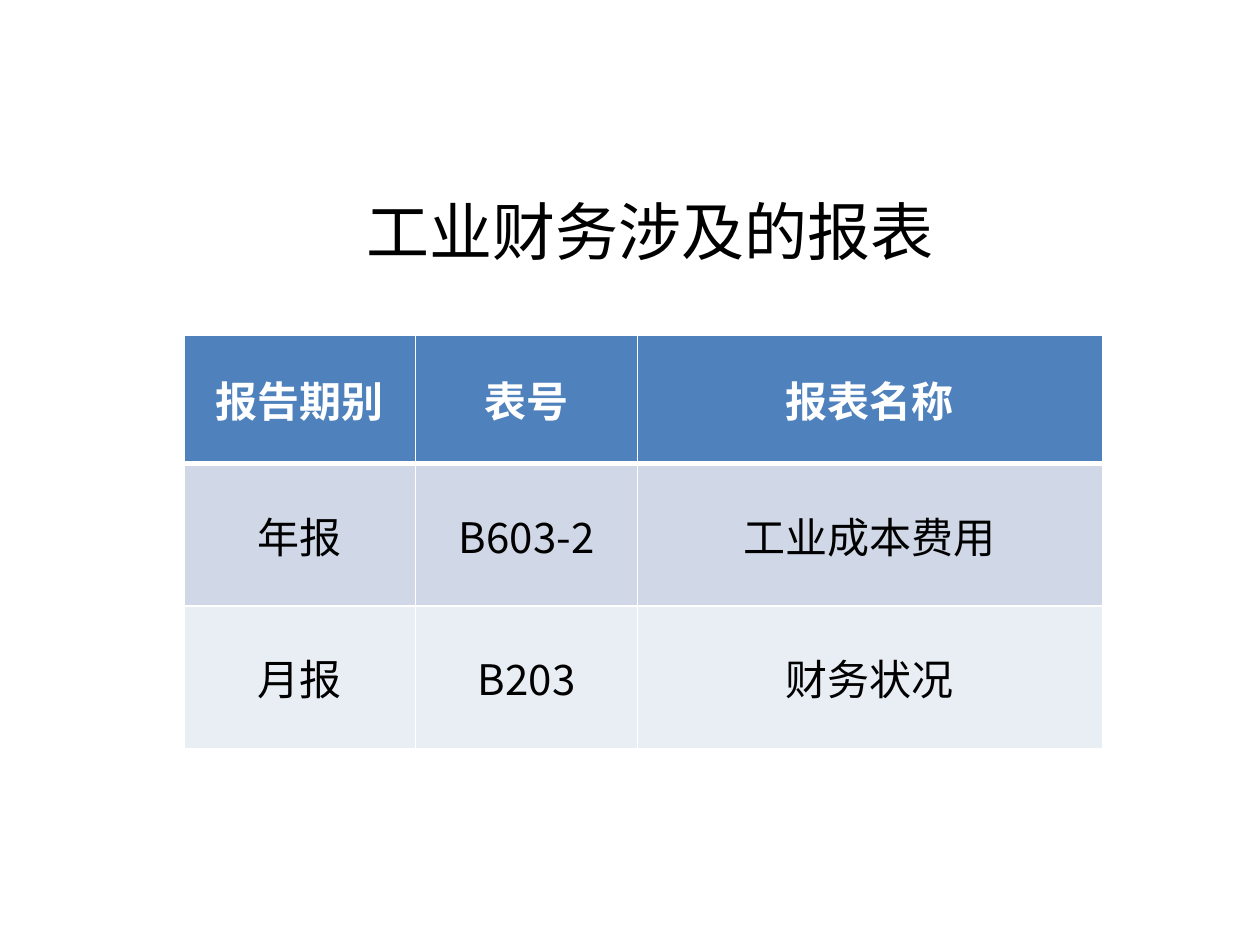
from pptx import Presentation
from pptx.dml.color import RGBColor
from pptx.enum.text import MSO_ANCHOR as Anchor, MSO_AUTO_SIZE as AutoSize, PP_ALIGN as Align
from pptx.oxml.ns import qn
from pptx.util import Inches, Pt
from lxml.etree import SubElement

FONT = "Noto Sans CJK SC"
WHITE = RGBColor(0xFF, 0xFF, 0xFF)
BLACK = RGBColor(0x00, 0x00, 0x00)
HEADER_BLUE = RGBColor(0x4F, 0x81, 0xBD)
BAND_BLUE = RGBColor(0xD0, 0xD8, 0xE8)
BAND_PALE = RGBColor(0xE9, 0xED, 0xF4)

TITLE = "工业财务涉及的报表"
REPORTS = [
    ["报告期别", "表号", "报表名称"],
    ["年报", "B603-2", "工业成本费用"],
    ["月报", "B203", "财务状况"],
]
ROW_FILLS = [HEADER_BLUE, BAND_BLUE, BAND_PALE]
COLUMN_WIDTHS = [1.84, 1.76, 3.69]
ROW_HEIGHTS = [1.02, 1.13, 1.13]


def write_text(frame, text, size=24, color=BLACK, bold=False):
    para = frame.paragraphs[0]
    para.alignment = Align.CENTER
    span = para.add_run()
    span.text = text
    span.font.name = FONT
    span.font.size = Pt(size)
    span.font.bold = bold
    span.font.color.rgb = color
    SubElement(span.font._element, qn("a:ea"), typeface=FONT)


def add_title(page):
    box = page.shapes.add_textbox(Inches(2.58), Inches(1.48), Inches(5.16), Inches(0.71))
    frame = box.text_frame
    frame.word_wrap = True
    frame.auto_size = AutoSize.SHAPE_TO_FIT_TEXT
    write_text(frame, TITLE, size=36)


def set_borders(cell, top=1, bottom=1):
    properties = cell._tc.get_or_add_tcPr()
    for side, width in (("L", 1), ("R", 1), ("T", top), ("B", bottom)):
        line = SubElement(properties, qn(f"a:ln{side}"), w=str(Pt(width)))
        fill = SubElement(line, qn("a:solidFill"))
        SubElement(fill, qn("a:srgbClr"), val=str(WHITE))


def fill_cell(cell, text, row):
    header = row == 0
    set_borders(cell, top=3 if row == 1 else 1, bottom=3 if header else 1)
    cell.fill.solid()
    cell.fill.fore_color.rgb = ROW_FILLS[row]
    cell.vertical_anchor = Anchor.MIDDLE
    write_text(cell.text_frame, text, color=WHITE if header else BLACK, bold=header)


def add_report_table(page):
    table = page.shapes.add_table(
        len(REPORTS), len(COLUMN_WIDTHS), Inches(1.46), Inches(2.66),
        Inches(sum(COLUMN_WIDTHS)), Inches(sum(ROW_HEIGHTS)),
    ).table
    for column, width in zip(table.columns, COLUMN_WIDTHS):
        column.width = Inches(width)
    for row, (height, texts) in enumerate(zip(ROW_HEIGHTS, REPORTS)):
        table.rows[row].height = Inches(height)
        for column, text in enumerate(texts):
            fill_cell(table.cell(row, column), text, row)


def main():
    deck = Presentation()
    deck.slide_width = Inches(10)
    deck.slide_height = Inches(7.5)
    page = deck.slides.add_slide(deck.slide_layouts[6])
    add_report_table(page)
    add_title(page)
    deck.save("out.pptx")


if __name__ == "__main__":
    main()
